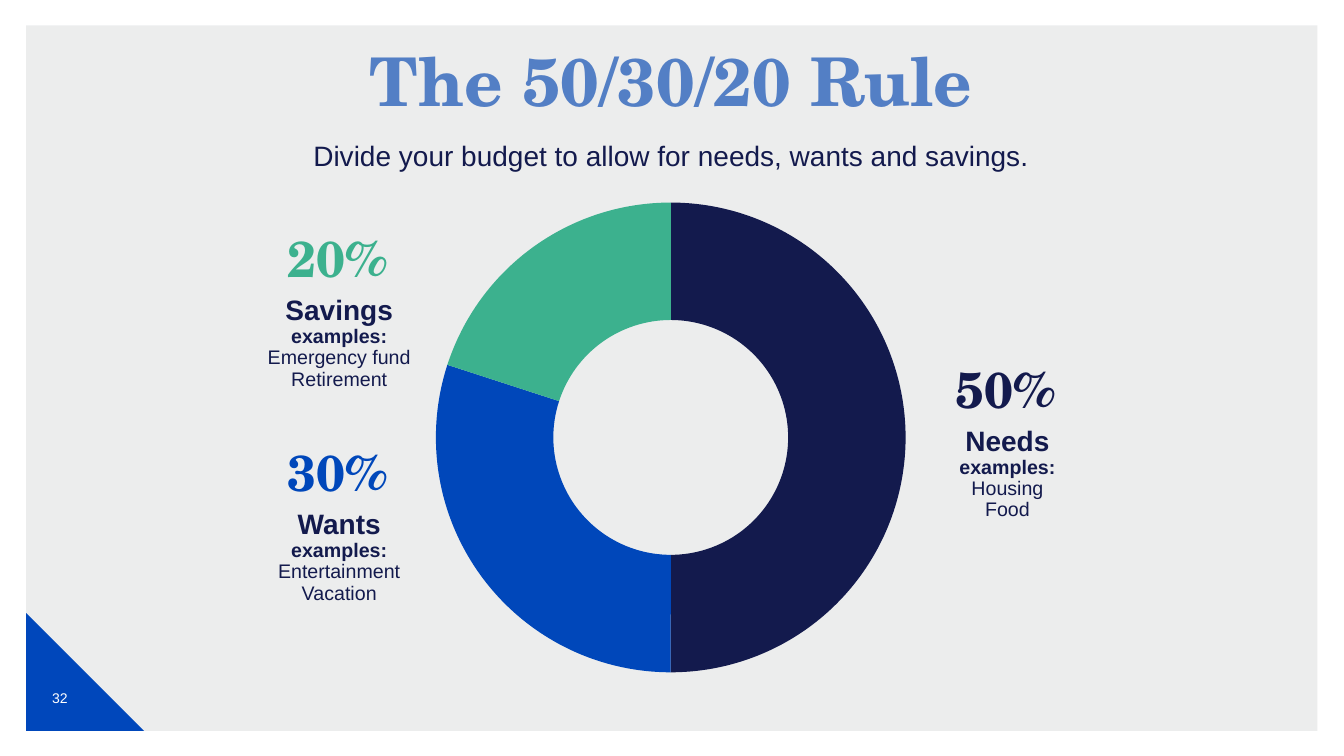
import lxml.etree
import pptx
import pptx.chart.data
import pptx.dml.color
import pptx.enum.chart
import pptx.enum.shapes
import pptx.enum.text
import pptx.oxml.ns
import pptx.util
from pptx.util import Cm

COLORS = {
    "panel": "D0D3D4",
    "corner": "0047BB",
    "needs": "131A4D",
    "wants": "0047BA",
    "savings": "3CB18E",
    "text": "131A4D",
    "white": "FFFFFF",
}
SANS, SERIF = "Arial", "TeX Gyre Schola"
SHARES = [("needs", 50), ("wants", 30), ("savings", 20)]
CALLOUTS = [
    ("savings", "20%", ["Savings", "examples:", "Emergency fund", "Retirement"], 6.3, 5.77),
    ("wants", "30%", ["Wants", "examples:", "Entertainment", "Vacation"], 6.3, 11.16),
    ("needs", "50%", ["Needs", "examples:", "Housing", "Food"], 23.14, 9.06),
]


def rgb(name):
    """Return the named palette colour."""
    return pptx.dml.color.RGBColor.from_string(COLORS[name])


def style_font(font, face, size, color, bold=False):
    """Set face, size, colour and weight of a font."""
    font.name, font.size, font.bold = face, pptx.util.Pt(size), bold
    font.color.rgb = rgb(color)


def write_lines(frame, lines, styles, spacing=0.9):
    """Fill a frame with centred lines, each with its own font style."""
    frame.word_wrap = True
    frame.auto_size = pptx.enum.text.MSO_AUTO_SIZE.NONE
    frame.vertical_anchor = pptx.enum.text.MSO_ANCHOR.TOP
    frame.margin_left = frame.margin_right = 0
    frame.text = "\n".join(lines)
    for paragraph, style in zip(frame.paragraphs, styles):
        paragraph.alignment = pptx.enum.text.PP_ALIGN.CENTER
        paragraph.line_spacing = spacing
        style_font(paragraph.runs[0].font, *style)


def add_filled(slide, preset, color, left, top, width, height):
    """Add a borderless, shadowless preset shape."""
    shape = slide.shapes.add_shape(preset, Cm(left), Cm(top), Cm(width), Cm(height))
    shape.shadow.inherit = False
    shape.fill.solid()
    shape.fill.fore_color.rgb = rgb(color)
    shape.line.fill.background()
    return shape


def add_text(slide, left, top, width, height, lines, styles, spacing=0.9):
    """Add a text box of centred lines."""
    box = slide.shapes.add_textbox(Cm(left), Cm(top), Cm(width), Cm(height))
    write_lines(box.text_frame, lines, styles, spacing)
    return box


def add_backdrop(slide, left, top, width, height):
    """Draw the tinted panel with its numbered corner."""
    presets = pptx.enum.shapes.MSO_SHAPE
    panel = add_filled(slide, presets.RECTANGLE, "panel", left, top, width, height)
    tint = next(panel.fill._xPr.iter(pptx.oxml.ns.qn("a:srgbClr")))
    lxml.etree.SubElement(tint, pptx.oxml.ns.qn("a:alpha"), val="40000")
    side = 2.97
    bottom = top + height
    add_filled(slide, presets.RIGHT_TRIANGLE, "corner", left, bottom - side, side, side)
    number = add_text(slide, left + 0.15, bottom - 1.58, 1.4, 1.47,
                      ["32"], [(SANS, 10, "white")], 1.0)
    number.text_frame.vertical_anchor = pptx.enum.text.MSO_ANCHOR.MIDDLE


def add_heading(slide, left, top, width):
    """Place the title and the line below it."""
    title = slide.shapes.title
    title.left, title.top, title.width, title.height = Cm(left), Cm(top), Cm(width), Cm(1.7)
    write_lines(title.text_frame, ["The 50/30/20 Rule"], [(SERIF, 48, "corner", True)])
    add_text(slide, left, top + 2.44, width, 0.97,
             ["Divide your budget to allow for needs, wants and savings."],
             [(SANS, 20, "text")], 0.8)


def add_budget_ring(slide, left, top, width, height):
    """Draw the doughnut chart of the budget shares."""
    budget = pptx.chart.data.CategoryChartData()
    budget.categories = ["1", "2", "3"]
    budget.add_series("Series 1", [share for _, share in SHARES])
    chart = slide.shapes.add_chart(
        pptx.enum.chart.XL_CHART_TYPE.DOUGHNUT,
        Cm(left), Cm(top), Cm(width), Cm(height), budget).chart
    chart.has_legend = chart.has_title = False
    style_font(chart.font, SANS, 10, "text")
    ring = chart.plots[0]
    ring.vary_by_categories = True
    for index, (name, _) in enumerate(SHARES):
        slice_format = ring.series[0].points[index].format
        slice_format.fill.solid()
        slice_format.fill.fore_color.rgb = rgb(name)
        slice_format.line.fill.background()

    qn = pptx.oxml.ns.qn
    next(chart.element.iter(qn("c:holeSize"))).set("val", "75")
    plot_area = next(chart.element.iter(qn("c:plotArea")))
    for layout in plot_area.findall(qn("c:layout")):
        plot_area.remove(layout)
    layout = lxml.etree.Element(qn("c:layout"))
    plot_area.insert(0, layout)
    manual = lxml.etree.SubElement(layout, qn("c:manualLayout"))
    diameter = 11.84
    across, down = diameter / width, diameter / height
    for tag, value in [("layoutTarget", "inner"), ("xMode", "edge"), ("yMode", "edge"),
                       ("x", (1 - across) / 2), ("y", (1 - down) / 2),
                       ("w", across), ("h", down)]:
        lxml.etree.SubElement(manual, qn("c:" + tag), val=str(value))


def add_callout(slide, name, percent, details, left, top):
    """Place one share with its heading and examples."""
    add_text(slide, left, top, 4.42, 1.7, [percent], [(SERIF, 36, name, True)])
    add_text(slide, left, top + 1.58, 4.5, 3.4, details,
             [(SANS, 20, "text", True), (SANS, 14, "text", True),
              (SANS, 14, "text"), (SANS, 14, "text")])


def main():
    """Build and save the slide."""
    deck = pptx.Presentation()
    deck.slide_width, deck.slide_height = Cm(33.87), Cm(19.05)
    slide = deck.slides.add_slide(deck.slide_layouts[5])
    add_backdrop(slide, 0.66, 0.64, 32.54, 17.78)
    add_heading(slide, 4.14, 1.09, 25.55)
    add_budget_ring(slide, 7.52, 4.75, 18.77, 12.55)
    for callout in CALLOUTS:
        add_callout(slide, *callout)
    deck.save("out.pptx")


if __name__ == "__main__":
    main()
